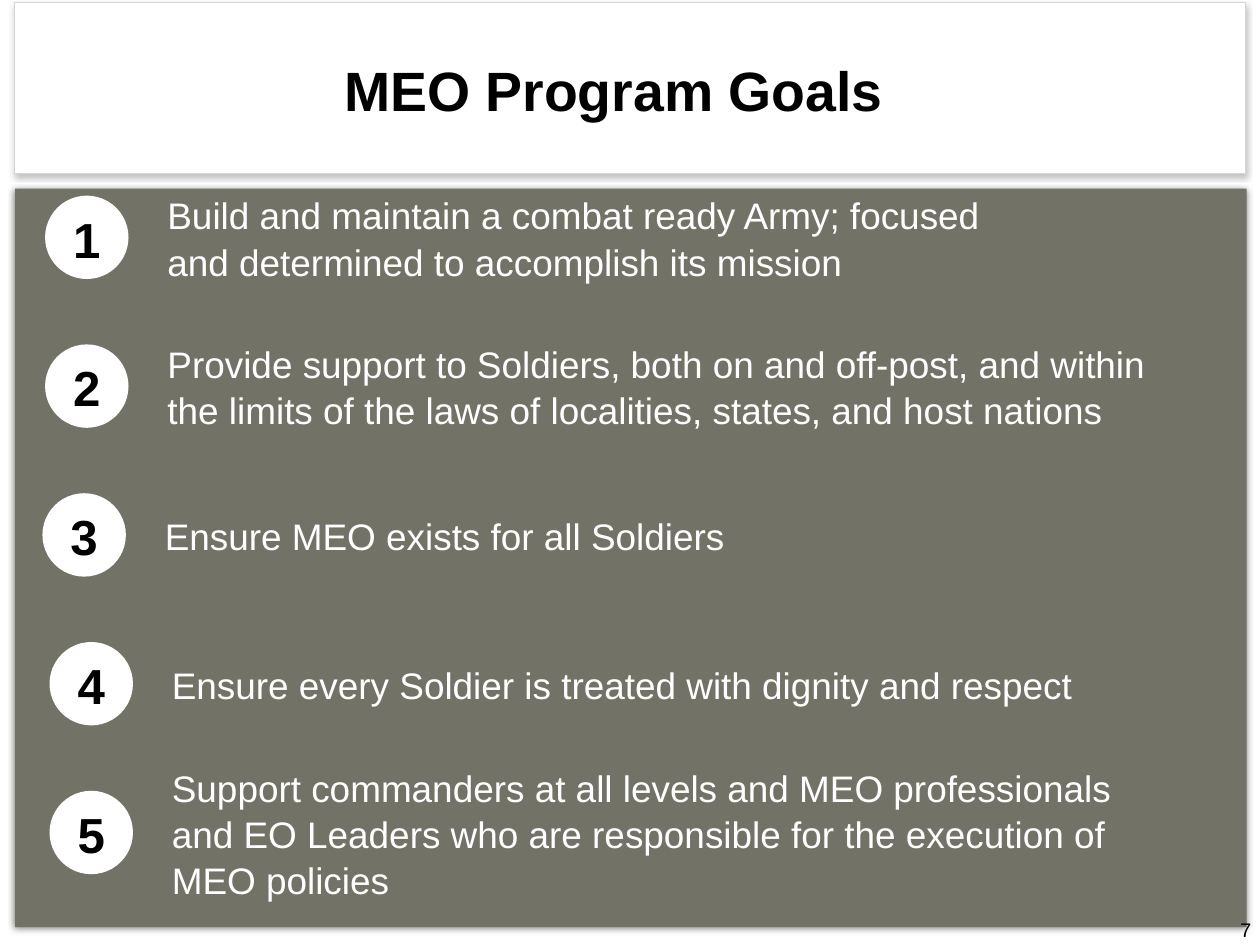
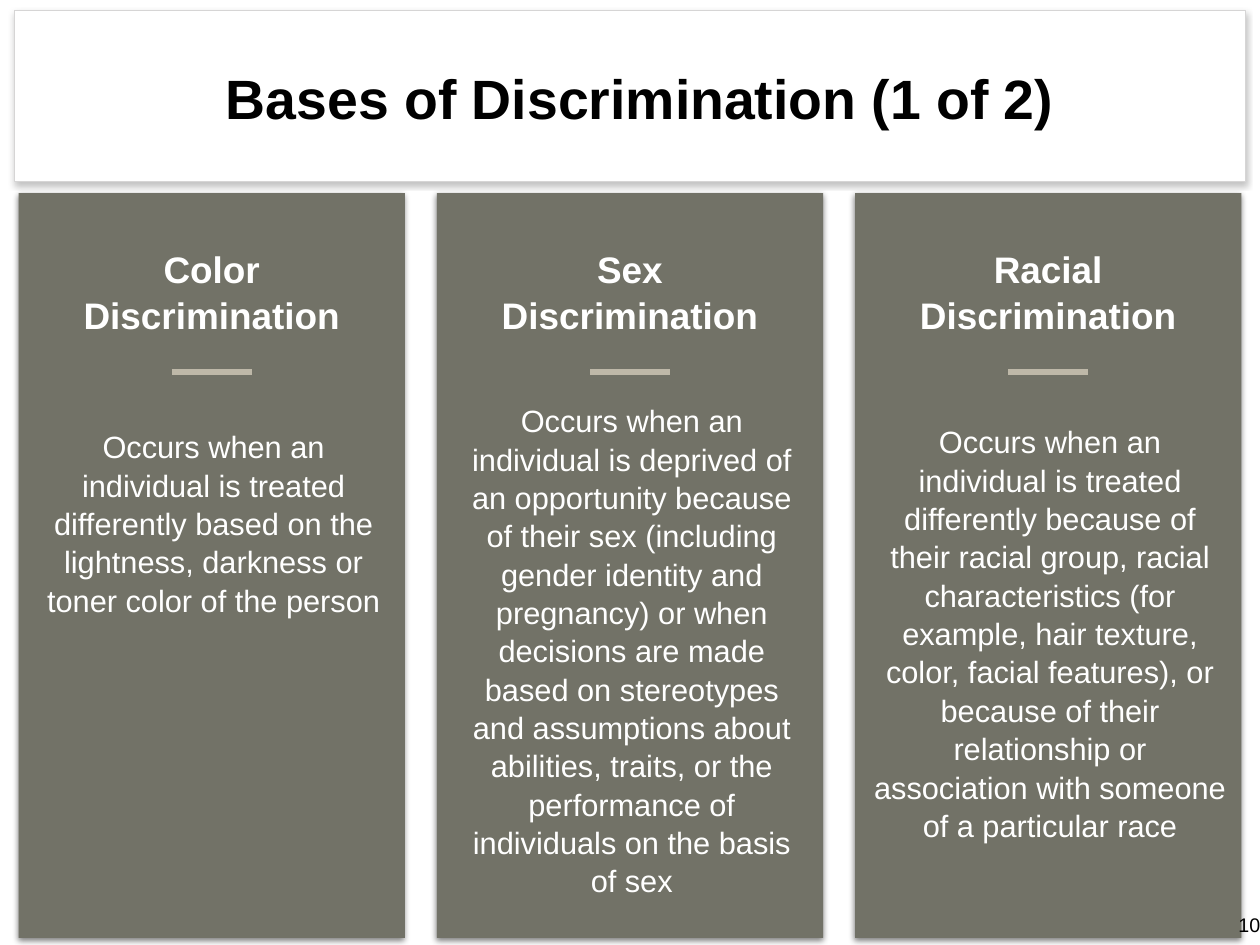
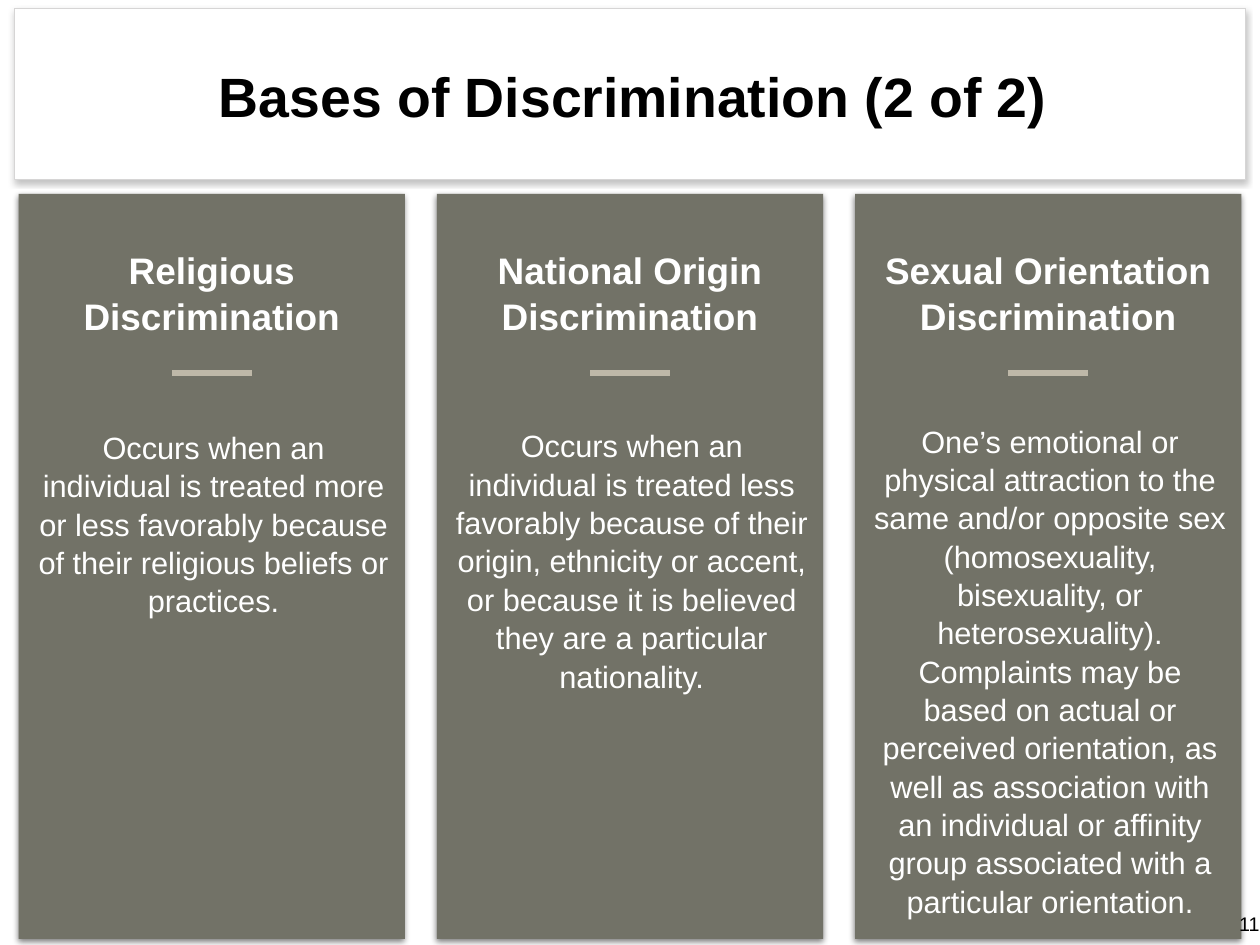
from dataclasses import dataclass

from lxml import etree
from pptx import Presentation
from pptx import util as u
from pptx.dml.color import RGBColor
from pptx.enum import shapes, text
from pptx.oxml.ns import qn

SLIDE_W, SLIDE_H = 14.22, 10.67
FONT = "Arial"
WHITE, BLACK = "FFFFFF", "000000"
OLIVE, SAND, BAND_EDGE = "727267", "BEB8A8", "D6D5D5"
INSET = 0.06

BAND_LEFT, BAND_W, BAND_H = 0.16, 13.9, 1.93
TITLE_H, TITLE_DROP = 0.87, 0.53

GOAL_TOP, GOAL_PITCH = 2.23, 1.68
BADGE, GOAL_INDENT, GOAL_LINE = 0.9, 1.3, 0.5

COLUMN_LEFT, COLUMN_PITCH, COLUMN_W, COLUMN_H = 0.21, 4.72, 4.36, 8.41
HEADING_W, HEADING_H, HEADING_DROP = 3.2, 1.11, 0.55
DASH_W, DASH_DROP = 0.9, 2.02
BODY_W, BODY_LINE, BODY_INDENT = 4.1, 0.415, 0.15


@dataclass
class Frame:
    """What each slide carries besides its content; lengths in inches."""
    title: str
    title_left: float
    title_w: float
    band_top: float
    page: str
    page_left: float
    page_top: float


@dataclass
class Goal:
    left: float
    width: float
    lines: int
    wording: str


@dataclass
class Basis:
    heading: str
    lines: int
    body: str
    body_drop: float = 2.62


GOALS = [
    Goal(0.53, 9.36, 2, "Build and maintain a combat ready Army; focused and "
         "determined to accomplish its mission"),
    Goal(0.53, 11.45, 2, "Provide support to Soldiers, both on and off-post, and "
         "within the limits of the laws of localities, states, and host nations"),
    Goal(0.5, 6.79, 1, "Ensure MEO exists for all Soldiers"),
    Goal(0.58, 10.56, 1, "Ensure every Soldier is treated with dignity and respect"),
    Goal(0.58, 11.45, 3, "Support commanders at all levels and MEO professionals "
         "and EO Leaders who are responsible for the execution of MEO policies"),
]

FIRST_BASES = [
    Basis("Color", 5, "Occurs when an individual is treated differently based on "
          "the lightness, darkness or toner color of the person"),
    Basis("Sex", 13, "Occurs when an individual is deprived of an opportunity "
          "because of their sex (including gender identity and pregnancy) or when "
          "decisions are made based on stereotypes and assumptions about "
          "abilities, traits, or the performance of individuals on the basis\n"
          "of sex", body_drop=2.4),
    Basis("Racial", 11, "Occurs when an individual is treated differently because "
          "of their racial group, racial characteristics (for example, hair "
          "texture, color, facial features), or because of their relationship or "
          "association with someone of a particular race"),
]

SECOND_BASES = [
    Basis("Religious", 5, "Occurs when an individual is treated more or less "
          "favorably because of their religious beliefs or practices."),
    Basis("National Origin", 7, "Occurs when an individual is treated less "
          "favorably because of their origin, ethnicity or accent, or because it "
          "is believed they are a particular nationality."),
    Basis("Sexual Orientation", 13, "One’s emotional or physical attraction to the "
          "same and/or opposite sex (homosexuality, bisexuality, or "
          "heterosexuality). Complaints may be based on actual or perceived "
          "orientation, as well as association with an individual or affinity "
          "group associated with a particular orientation."),
]


def color(value: str) -> RGBColor:
    return RGBColor.from_string(value)


def inches(*lengths: float) -> list:
    return [u.Inches(length) for length in lengths]


def write(shape, wording: str, *, size: float, ink: str = WHITE, bold: bool = False,
          centered: bool = True, wrap: bool = True, inset: float = INSET,
          anchor=text.MSO_ANCHOR.MIDDLE) -> None:
    """Fill a shape with text, one paragraph a line."""
    frame = shape.text_frame
    frame.text = wording
    frame.word_wrap = wrap
    frame.auto_size = text.MSO_AUTO_SIZE.NONE
    frame.vertical_anchor = anchor
    frame.margin_left = frame.margin_right = u.Inches(inset)
    frame.margin_top = frame.margin_bottom = u.Inches(inset)
    for paragraph in frame.paragraphs:
        paragraph.alignment = text.PP_ALIGN.CENTER if centered else text.PP_ALIGN.LEFT
        paragraph.line_spacing = 1.04
        paragraph.font.name = FONT
        paragraph.font.size = u.Pt(size)
        paragraph.font.bold = bold
        paragraph.font.color.rgb = color(ink)


def add_text(slide, at: tuple, wording: str, **style):
    box = slide.shapes.add_textbox(*inches(*at))
    write(box, wording, **style)
    return box


def cast_shadow(shape, opacity: int) -> None:
    """Give a shape a soft shadow straight below it; opacity in percent."""
    effects = shape._element.spPr.find(qn("a:effectLst"))
    shadow = etree.SubElement(effects, qn("a:outerShdw"), blurRad=str(u.Pt(5)),
                              dist=str(u.Pt(2)), dir="5400000", rotWithShape="0")
    tint = etree.SubElement(shadow, qn("a:srgbClr"), val=BLACK)
    etree.SubElement(tint, qn("a:alpha"), val=str(opacity * 1000))


def add_block(slide, at: tuple, fill: str, *, edge: str = "", edge_pt: float = 1,
              shadow: int = 0, kind=shapes.MSO_SHAPE.RECTANGLE):
    block = slide.shapes.add_shape(kind, *inches(*at))
    block.shadow.inherit = False
    block.fill.solid()
    block.fill.fore_color.rgb = color(fill)
    if edge:
        block.line.color.rgb = color(edge)
        block.line.width = u.Pt(edge_pt)
    else:
        block.line.fill.background()
    if shadow:
        cast_shadow(block, shadow)
    return block


def add_dash(slide, center: float, top: float) -> None:
    dash = slide.shapes.add_connector(
        shapes.MSO_CONNECTOR.STRAIGHT,
        *inches(center - DASH_W / 2, top, center + DASH_W / 2, top))
    dash.line.color.rgb = color(SAND)
    dash.line.width = u.Pt(5)
    etree.SubElement(dash._element.spPr, qn("a:effectLst"))


def start_slide(deck, frame: Frame):
    """Add a slide with its title band and title."""
    slide = deck.slides.add_slide(deck.slide_layouts[5])
    add_block(slide, (BAND_LEFT, frame.band_top, BAND_W, BAND_H), WHITE,
              edge=BAND_EDGE, shadow=23)
    title = slide.shapes.title
    title.left, title.top, title.width, title.height = inches(
        frame.title_left, frame.band_top + TITLE_DROP, frame.title_w, TITLE_H)
    write(title, frame.title, size=45, ink=BLACK, bold=True, wrap=False)
    slide.shapes._spTree.append(title._element)  # in front of the band
    return slide


def add_page_number(slide, frame: Frame) -> None:
    add_text(slide, (frame.page_left, frame.page_top, 0.24, 0.38), frame.page,
             size=16, ink=BLACK, wrap=False, anchor=text.MSO_ANCHOR.TOP)


def build_goals(deck, frame: Frame, goals: list[Goal]) -> None:
    slide = start_slide(deck, frame)
    add_block(slide, (0.17, 2.13, BAND_W, 8.34), OLIVE, shadow=50)
    for row, goal in enumerate(goals):
        top = GOAL_TOP + row * GOAL_PITCH
        badge = add_block(slide, (goal.left, top, BADGE, BADGE), WHITE, edge=WHITE,
                          edge_pt=3, kind=shapes.MSO_SHAPE.OVAL)
        write(badge, str(row + 1), size=40, ink=BLACK, bold=True, wrap=False, inset=0)
        height = goal.lines * GOAL_LINE + 2 * INSET
        add_text(slide, (goal.left + GOAL_INDENT, top + (BADGE - height) / 2,
                         goal.width, height), goal.wording, size=30, centered=False)
    add_page_number(slide, frame)


def build_bases(deck, frame: Frame, top: float, bases: list[Basis]) -> None:
    slide = start_slide(deck, frame)
    for column, basis in enumerate(bases):
        left = COLUMN_LEFT + column * COLUMN_PITCH
        center = left + COLUMN_W / 2
        add_block(slide, (left, top, COLUMN_W, COLUMN_H), OLIVE, shadow=50)
        add_text(slide, (center - HEADING_W / 2, top + HEADING_DROP, HEADING_W,
                         HEADING_H), f"{basis.heading}\nDiscrimination",
                 size=30, bold=True, wrap=False)
        add_dash(slide, center, top + DASH_DROP)
        add_text(slide, (left + BODY_INDENT, top + basis.body_drop, BODY_W,
                         basis.lines * BODY_LINE + 2 * INSET), basis.body, size=25)
    add_page_number(slide, frame)


def main() -> None:
    deck = Presentation()
    deck.slide_width, deck.slide_height = inches(SLIDE_W, SLIDE_H)
    build_goals(deck, Frame("MEO Program Goals", 3.8, 6.25, 0.03,
                            "7", 13.94, 10.29), GOALS)
    build_bases(deck, Frame("Bases of Discrimination (1 of 2)", 2.45, 9.54, 0.12,
                            "10", 13.98, 10.24), 2.18, FIRST_BASES)
    build_bases(deck, Frame("Bases of Discrimination (2 of 2)", 2.37, 9.54, 0.1,
                            "11", 13.98, 10.23), 2.19, SECOND_BASES)
    deck.save("out.pptx")


if __name__ == "__main__":
    main()
